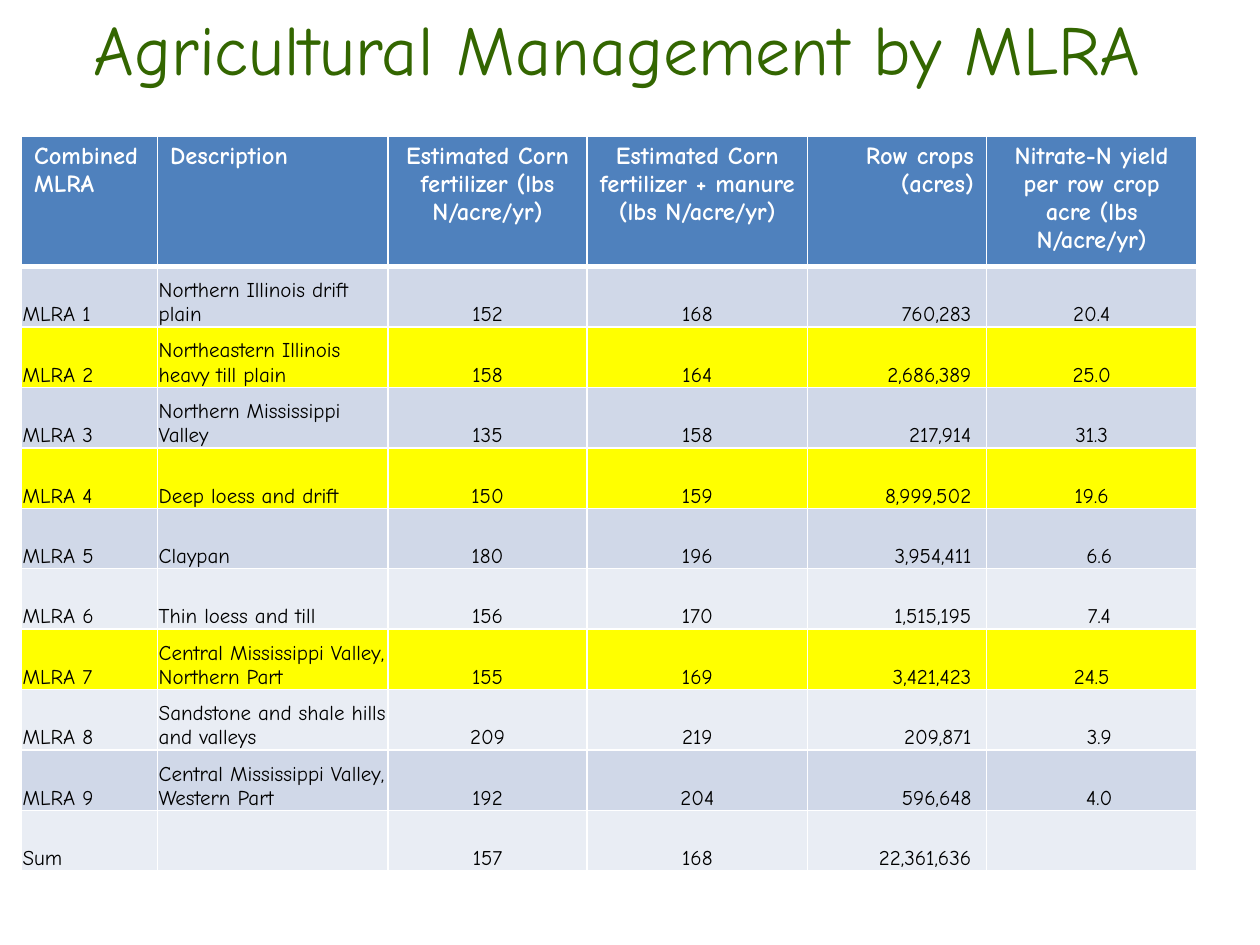
"""Builds the slide comparing agricultural management across MLRA regions."""
from lxml import etree
from pptx import Presentation, util as u
from pptx.dml.color import RGBColor
from pptx.enum import text
from pptx.oxml.ns import qn

FONT = "Comic Neue"
GREEN = RGBColor(0x33, 0x66, 0x00)
BLUE = RGBColor(0x4F, 0x81, 0xBD)
BAND_DARK = RGBColor(0xD0, 0xD8, 0xE8)
BAND_LIGHT = RGBColor(0xE9, 0xED, 0xF4)
YELLOW = RGBColor(0xFF, 0xFF, 0x00)
WHITE = RGBColor(0xFF, 0xFF, 0xFF)
BLACK = RGBColor(0, 0, 0)

LEFT, CENTER, RIGHT = text.PP_ALIGN.LEFT, text.PP_ALIGN.CENTER, text.PP_ALIGN.RIGHT

TITLE = "Agricultural Management by MLRA"
COLUMNS = [
    ("Combined MLRA", 1.08, LEFT),
    ("Description", 1.83, LEFT),
    ("Estimated Corn fertilizer (lbs N/acre/yr)", 1.58, CENTER),
    ("Estimated Corn fertilizer + manure (lbs N/acre/yr)", 1.75, CENTER),
    ("Row crops (acres)", 1.42, RIGHT),
    ("Nitrate-N yield per row crop acre (lbs N/acre/yr)", 1.67, CENTER),
]
ROWS = [
    ("MLRA 1", "Northern Illinois drift plain", "152", "168", "760,283", "20.4"),
    ("MLRA 2", "Northeastern Illinois heavy till plain", "158", "164", "2,686,389", "25.0"),
    ("MLRA 3", "Northern Mississippi Valley", "135", "158", "217,914", "31.3"),
    ("MLRA 4", "Deep loess and drift", "150", "159", "8,999,502", "19.6"),
    ("MLRA 5", "Claypan", "180", "196", "3,954,411", "6.6"),
    ("MLRA 6", "Thin loess and till", "156", "170", "1,515,195", "7.4"),
    ("MLRA 7", "Central Mississippi Valley, Northern Part", "155", "169", "3,421,423", "24.5"),
    ("MLRA 8", "Sandstone and shale hills and valleys", "209", "219", "209,871", "3.9"),
    ("MLRA 9", "Central Mississippi Valley, Western Part", "192", "204", "596,648", "4.0"),
    ("Sum", "", "157", "168", "22,361,636", ""),
]
HIGHLIGHTED = {"MLRA 2", "MLRA 4", "MLRA 7"}
HEADER_HEIGHT, ROW_HEIGHT = 0.83, 0.48
CROPS, YIELD = 4, 5
INSET, CROPS_INSET, SHORT_YIELD_INSET = 0.01, 0.12, 0.13


def add_text(tf, words, size, color, align, bold=False):
    p = tf.paragraphs[0]
    p.alignment = align
    if words:
        r = p.add_run()
        r.text = words
        r.font.name, r.font.size, r.font.bold = FONT, u.Pt(size), bold
        r.font.color.rgb = color


def set_borders(cell, top=1, bottom=1):
    tcPr = cell._tc.get_or_add_tcPr()
    for side, width in (("L", 1), ("R", 1), ("T", top), ("B", bottom)):
        ln = etree.SubElement(tcPr, qn(f"a:ln{side}"), w=str(u.Pt(width)))
        fill = etree.SubElement(ln, qn("a:solidFill"))
        etree.SubElement(fill, qn("a:srgbClr"), val=str(WHITE))


def fill_cell(cell, color):
    cell.fill.solid()
    cell.fill.fore_color.rgb = color


def add_title(s, width):
    tf = s.shapes.add_textbox(0, 0, width, u.Inches(0.75)).text_frame
    tf.word_wrap = True
    tf.vertical_anchor = text.MSO_ANCHOR.MIDDLE
    tf.margin_right = u.Inches(0.3)
    add_text(tf, TITLE, 40, GREEN, CENTER)


def add_management_table(s):
    width = sum(w for _, w, _ in COLUMNS)
    height = HEADER_HEIGHT + ROW_HEIGHT * len(ROWS)
    table = s.shapes.add_table(len(ROWS) + 1, len(COLUMNS), u.Inches(0.17), u.Inches(1.08),
                               u.Inches(width), u.Inches(height)).table
    for i, row in enumerate(table.rows):
        row.height = u.Inches(ROW_HEIGHT if i else HEADER_HEIGHT)
    for j, (heading, col_width, align) in enumerate(COLUMNS):
        table.columns[j].width = u.Inches(col_width)
        cell = table.cell(0, j)
        set_borders(cell, bottom=3)
        fill_cell(cell, BLUE)
        add_text(cell.text_frame, heading, 14, WHITE, align, bold=True)
        for i, values in enumerate(ROWS, 1):
            cell = table.cell(i, j)
            set_borders(cell, top=3 if i == 1 else 1)
            band = BAND_DARK if i % 2 else BAND_LIGHT
            fill_cell(cell, YELLOW if values[0] in HIGHLIGHTED else band)
            cell.vertical_anchor = text.MSO_ANCHOR.BOTTOM
            short_yield = j == YIELD and len(values[j]) == 3
            cell.margin_left = u.Inches(SHORT_YIELD_INSET if short_yield else INSET)
            cell.margin_right = u.Inches(CROPS_INSET if j == CROPS else INSET)
            cell.margin_top, cell.margin_bottom = u.Inches(INSET), 0
            add_text(cell.text_frame, values[j], 12, BLACK, align)


def main():
    prs = Presentation()
    prs.slide_width, prs.slide_height = u.Inches(10), u.Inches(7.5)
    s = prs.slides.add_slide(prs.slide_layouts[6])
    add_title(s, prs.slide_width)
    add_management_table(s)
    prs.save("out.pptx")


if __name__ == "__main__":
    main()
